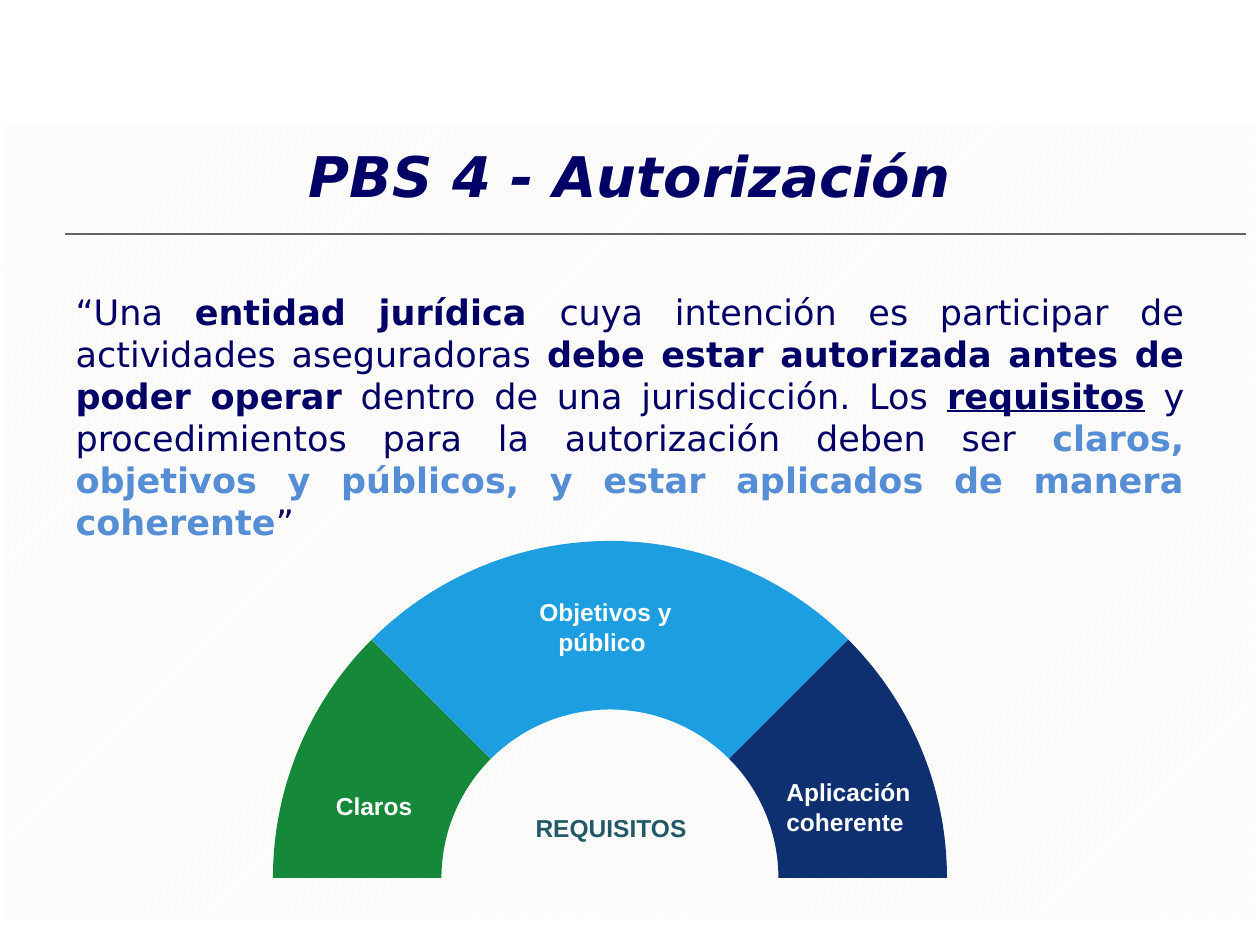
from math import atan, cos, degrees, hypot, radians, sin, tan

from lxml.etree import SubElement
from pptx import Presentation
from pptx.dml.color import RGBColor
from pptx.enum.dml import MSO_PATTERN as PATTERN
from pptx.enum.shapes import MSO_CONNECTOR as LINK, MSO_SHAPE as SHAPE
from pptx.enum.text import MSO_ANCHOR as ANCHOR, MSO_AUTO_SIZE as FIT, PP_ALIGN as ALIGN
from pptx.oxml.ns import qn
from pptx.util import Inches, Pt

DPI = 126
NAVY, SKY, WHITE = "000066", "558ED5", "FFFFFF"
SWEEP = 45
# Bezier handle of an arc of SWEEP degrees, as a share of its radius
PULL = 4 / 3 * tan(radians(SWEEP / 4))


def px(n):
    return round(n * Inches(1) / DPI)


def rgb(code):
    return RGBColor.from_string(code)


def place(shape, box):
    shape.left, shape.top, shape.width, shape.height = map(px, box)


def add_run(para, text, size, face, color, bold=False, italic=None, under=None):
    run = para.add_run()
    run.text = text
    font = run.font
    font.size, font.name = Pt(size), face
    font.bold, font.italic, font.underline = bold, italic, under
    font.color.rgb = rgb(color)


def add_panel(slide, box):
    panel = slide.shapes.add_shape(SHAPE.RECTANGLE, *map(px, box))
    panel.shadow.inherit = False
    panel.line.fill.background()
    panel.fill.patterned()
    panel.fill.pattern = PATTERN.DARK_UPWARD_DIAGONAL
    panel.fill.fore_color.rgb = rgb("EEECE1")
    panel.fill.back_color.rgb = rgb(WHITE)
    # Behind the placeholders
    slide.shapes._spTree.insert(2, panel._element)


def add_title(slide, box):
    title = slide.shapes.title
    place(title, box)
    frame = title.text_frame
    frame.auto_size = FIT.NONE
    frame.vertical_anchor = ANCHOR.MIDDLE
    para = frame.paragraphs[0]
    para.alignment = ALIGN.CENTER
    add_run(para, "PBS 4 - Autorización", 32, "DejaVu Sans", NAVY, True, True)


def add_rule(slide, x, y, width):
    rule = slide.shapes.add_connector(LINK.STRAIGHT, *map(px, (x, y, x + width, y)))
    rule.line.color.rgb = rgb("626469")
    rule.line.width = Pt(1)
    SubElement(rule._element.spPr, qn("a:effectLst"))


def add_quote(slide, box):
    body = slide.placeholders[1]
    place(body, box)
    frame = body.text_frame
    frame.auto_size = FIT.NONE
    para = frame.paragraphs[0]
    props = para._p.get_or_add_pPr()
    props.set("marL", "0")
    props.set("indent", "0")
    SubElement(props, qn("a:buNone"))
    para.alignment = ALIGN.JUSTIFY
    para.space_before = Pt(0)
    runs = (
        ("“Una ", NAVY, False, None),
        ("entidad jurídica ", NAVY, True, None),
        ("cuya intención es participar de actividades aseguradoras ", NAVY, False, None),
        ("debe estar autorizada antes de poder operar", NAVY, True, None),
        (" dentro de una jurisdicción. Los ", NAVY, False, None),
        ("requisitos", NAVY, True, True),
        (" y procedimientos para la autorización deben ser ", NAVY, False, None),
        ("claros, objetivos y públicos, y estar aplicados de manera coherente",
         SKY, True, None),
        ("”", NAVY, False, None),
    )
    for text, color, bold, under in runs:
        add_run(para, text, 20, "DejaVu Sans", color, bold, under=under)


def bend(line, points):
    """Turn a straight segment into a curve through two handles to its end."""
    curve = line.makeelement(qn("a:cubicBezTo"))
    for x, y in points:
        SubElement(curve, qn("a:pt"), x=str(x), y=str(y))
    line.getparent().replace(line, curve)


def add_wedge(group, mid, base, radius, start, color):
    """Draw an eighth of a ring, clockwise from start degrees."""
    def spot(reach, angle):
        turn = radians(angle)
        return px(mid + reach * cos(turn)), px(base - reach * sin(turn))

    end, inner = start - SWEEP, radius / 2
    lean, far = degrees(atan(PULL)), hypot(1, PULL)
    pen = group.shapes.build_freeform(*spot(radius, start))
    pen.add_line_segments(
        [spot(radius, end), spot(inner, end), spot(inner, start)], close=True)
    wedge = pen.convert_to_shape()
    x0, y0 = wedge.left, wedge.top

    outer_line, _, inner_line = list(wedge._element.iter(qn("a:lnTo")))[:3]
    arcs = ((outer_line, radius, start, end, lean), (inner_line, inner, end, start, -lean))
    for line, reach, a, b, tilt in arcs:
        stops = (spot(reach * far, a - tilt), spot(reach * far, b + tilt), spot(reach, b))
        bend(line, [(x - x0, y - y0) for x, y in stops])

    wedge.shadow.inherit = False
    wedge.fill.solid()
    wedge.fill.fore_color.rgb = rgb(color)
    wedge.line.fill.background()


def add_label(slide, box, text, color):
    label = slide.shapes.add_textbox(*map(px, box))
    frame = label.text_frame
    frame.word_wrap = True
    frame.auto_size = FIT.SHAPE_TO_FIT_TEXT
    para = frame.paragraphs[0]
    para.alignment = ALIGN.CENTER
    add_run(para, text, 14, "Arial", color, True)


def add_arch(slide, left, top, radius):
    group = slide.shapes.add_group_shape()
    hues = ("158839", "1D9EE0", "1D9EE0", "0E2F70")
    for i, hue in enumerate(hues):
        add_wedge(group, left + radius, top + radius, radius, 180 - SWEEP * i, hue)
    labels = (
        (0, 244, 209, 43, "Claros ", WHITE),
        (228, 50, 209, 72, "Objetivos y público ", WHITE),
        (471, 230, 209, 72, "Aplicación coherente ", WHITE),
        (197, 266, 282, 43, "REQUISITOS", "215968"),
    )
    for x, y, w, h, text, color in labels:
        add_label(slide, (left + x, top + y, w, h), text, color)


def main():
    deck = Presentation()
    deck.slide_width, deck.slide_height = Inches(10), Inches(7.5)
    slide = deck.slides.add_slide(deck.slide_layouts[1])
    add_panel(slide, (4, 125, 1251, 794))
    add_title(slide, (63, 96, 1134, 158))
    add_quote(slide, (63, 284, 1134, 561))
    add_rule(slide, 65, 234, 1181)
    add_arch(slide, 273, 541, 337)
    deck.save("out.pptx")


if __name__ == "__main__":
    main()
